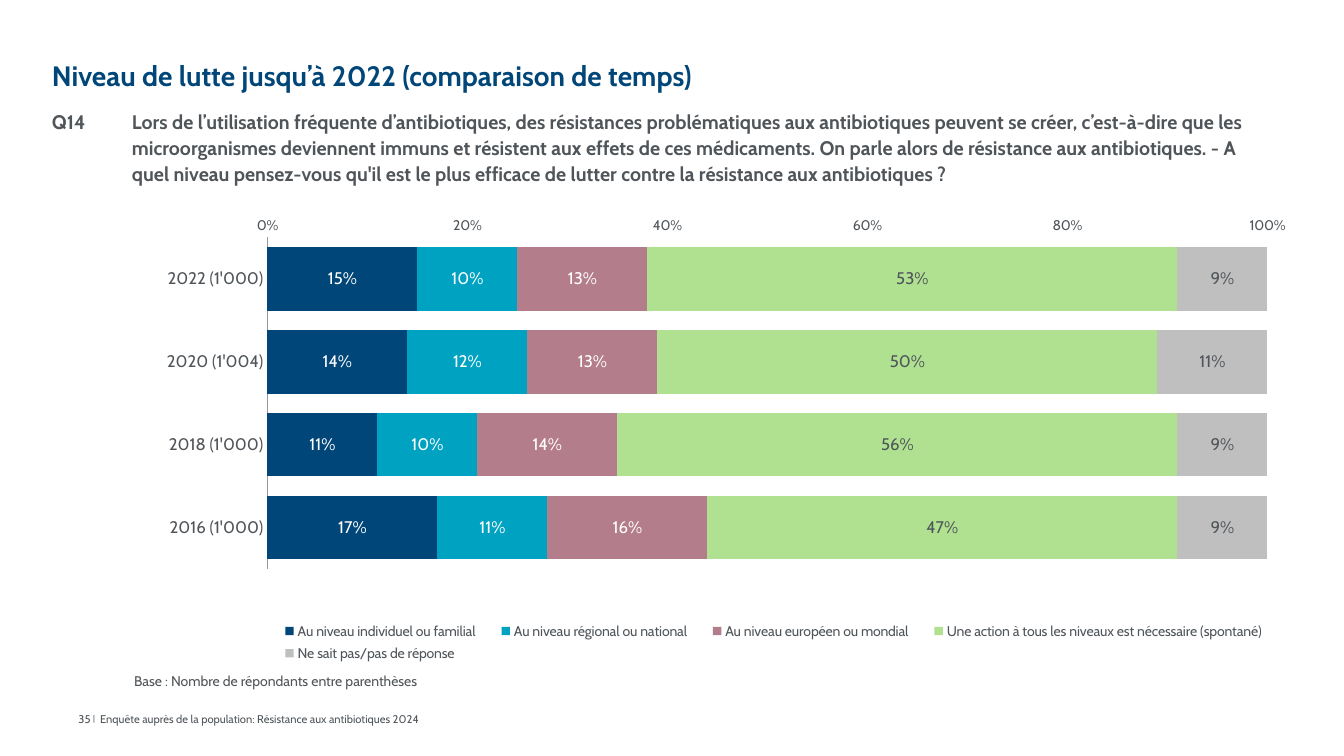
from dataclasses import dataclass

from lxml import etree
from pptx import Presentation
from pptx.chart.data import CategoryChartData
from pptx.dml.color import RGBColor
from pptx.enum.chart import XL_AXIS_CROSSES, XL_CHART_TYPE, XL_LEGEND_POSITION, XL_TICK_MARK
from pptx.enum.text import MSO_ANCHOR, PP_ALIGN
from pptx.oxml.ns import qn
from pptx.util import Pt

STACKED = XL_CHART_TYPE.BAR_STACKED_100
NO_TICK = XL_TICK_MARK.NONE
MAXIMUM = XL_AXIS_CROSSES.MAXIMUM
LEGEND_BOTTOM = XL_LEGEND_POSITION.BOTTOM
TOP, BOTTOM = MSO_ANCHOR.TOP, MSO_ANCHOR.BOTTOM
LEFT, RIGHT = PP_ALIGN.LEFT, PP_ALIGN.RIGHT
EMU_PER_PX = 914400 / 100.8


@dataclass
class Theme:
    font: str = "Cabin"
    navy: str = "004678"
    text: str = "50555A"
    white: str = "FFFFFF"
    axis: str = "93999F"
    cyan: str = "00A2C2"
    mauve: str = "B47D8C"
    green: str = "AFE191"
    grey: str = "BFBFBF"
    title: int = 20
    question: int = 14
    label: int = 12
    small: int = 10
    footer: int = 8


theme = Theme()


def style(font, size, color, bold=False):
    font.name = theme.font
    font.size = Pt(size)
    font.bold = bold
    font.color.rgb = RGBColor.from_string(color)


def add_text(box, text, size, color, bold=False, anchor=TOP, align=LEFT, spacing=1.0):
    frame = slide.shapes.add_textbox(*[round(n * EMU_PER_PX) for n in box]).text_frame
    frame.margin_left = frame.margin_top = frame.margin_right = frame.margin_bottom = 0
    frame.word_wrap = True
    frame.vertical_anchor = anchor
    frame.text = text
    paragraph = frame.paragraphs[0]
    paragraph.alignment = align
    paragraph.line_spacing = spacing
    style(paragraph.runs[0].font, size, color, bold)
    return paragraph


prs = Presentation()
prs.slide_width = round(1344 * EMU_PER_PX)
prs.slide_height = round(756 * EMU_PER_PX)
slide = prs.slides.add_slide(prs.slide_layouts[6])

add_text((52, 29, 834, 64), "Niveau de lutte jusqu’à 2022 (comparaison de temps)",
         theme.title, theme.navy, bold=True, anchor=BOTTOM, spacing=0.9)

question = add_text(
    (52, 108, 1223, 80),
    "Q14\tLors de l’utilisation fréquente d’antibiotiques, des résistances problématiques aux "
    "antibiotiques peuvent se créer, c’est-à-dire que les microorganismes deviennent immuns et "
    "résistent aux effets de ces médicaments. On parle alors de résistance aux antibiotiques. "
    "- A quel niveau pensez-vous qu'il est le plus efficace de lutter contre la résistance aux "
    "antibiotiques ?",
    theme.question, theme.text, bold=True, spacing=1.1)
hanging = round(80 * EMU_PER_PX)
question_props = question._p.get_or_add_pPr()
question_props.set("marL", str(hanging))
question_props.set("indent", str(-hanging))

answers = [
    ("Au niveau individuel ou familial", (0.15, 0.14, 0.11, 0.17), theme.navy, theme.white),
    ("Au niveau régional ou national", (0.10, 0.12, 0.10, 0.11), theme.cyan, theme.white),
    ("Au niveau européen ou mondial", (0.13, 0.13, 0.14, 0.16), theme.mauve, theme.white),
    ("Une action à tous les niveaux est nécessaire (spontané)",
     (0.53, 0.50, 0.56, 0.47), theme.green, theme.text),
    ("Ne sait pas/pas de réponse", (0.09, 0.11, 0.09, 0.09), theme.grey, theme.text),
]
survey = CategoryChartData(number_format="0%")
survey.categories = ["2022 (1'000)", "2020 (1'004)", "2018 (1'000)", "2016 (1'000)"]
for name, shares, _, _ in answers:
    survey.add_series(name, shares)

chart_box = [round(n * EMU_PER_PX) for n in (132, 204, 1199, 498)]
chart = slide.shapes.add_chart(STACKED, *chart_box, survey).chart
style(chart.font, theme.small, theme.text)
chart.has_title = False

plot = chart.plots[0]
plot.gap_width = 30
plot.overlap = 100
plot.vary_by_categories = False
for series, (_, _, fill, label_color) in zip(plot.series, answers):
    series.format.fill.solid()
    series.format.fill.fore_color.rgb = RGBColor.from_string(fill)
    labels = series.data_labels
    labels.show_value = True
    labels.number_format = "0%"
    labels.number_format_is_linked = False
    style(labels.font, theme.label, label_color)

years = chart.category_axis
years.reverse_order = True
years.crosses = MAXIMUM
years.format.line.color.rgb = RGBColor.from_string(theme.axis)
years.format.line.width = Pt(0.75)

percent = chart.value_axis
percent.minimum_scale, percent.maximum_scale, percent.major_unit = 0, 1, 0.2
percent.tick_labels.number_format = "0%"
percent.tick_labels.number_format_is_linked = False
percent.format.line.fill.background()

for axis, size in ((years, theme.label), (percent, theme.small)):
    axis.has_major_gridlines = False
    axis.major_tick_mark = axis.minor_tick_mark = NO_TICK
    style(axis.tick_labels.font, size, theme.text)

chart.has_legend = True
legend = chart.legend
legend.position = LEGEND_BOTTOM
legend.include_in_layout = False
style(legend.font, theme.small, theme.text)

plot_area = chart._chartSpace.chart.plotArea
for old_layout in plot_area.findall(qn("c:layout")):
    plot_area.remove(old_layout)
for parent, place, target, bounds in (
    (plot_area, 0, "inner", (0.113, 0.067, 0.834, 0.666)),
    (legend._element, 1, None, (0.11, 0.83, 0.85, 0.1)),
):
    layout = etree.Element(qn("c:layout"))
    manual = etree.SubElement(layout, qn("c:manualLayout"))
    settings = [("layoutTarget", target)] if target else []
    settings += [("xMode", "edge"), ("yMode", "edge"), *zip("xywh", bounds)]
    for tag, value in settings:
        etree.SubElement(manual, qn(f"c:{tag}")).set("val", str(value))
    parent.insert(place, layout)

add_text((134, 671, 750, 18), "Base : Nombre de répondants entre parenthèses",
         theme.small, theme.text, spacing=1.1)
add_text((100, 710, 787, 16), "Enquête auprès de la population: Résistance aux antibiotiques 2024",
         theme.footer, theme.text, anchor=BOTTOM)
page = add_text((52, 710, 43, 16), "35 ", theme.footer, theme.text, anchor=BOTTOM, align=RIGHT)
divider = page.add_run()
divider.text = "|"
style(divider.font, theme.small, theme.text)
divider.font._element.set("baseline", "10000")

prs.save("out.pptx")
